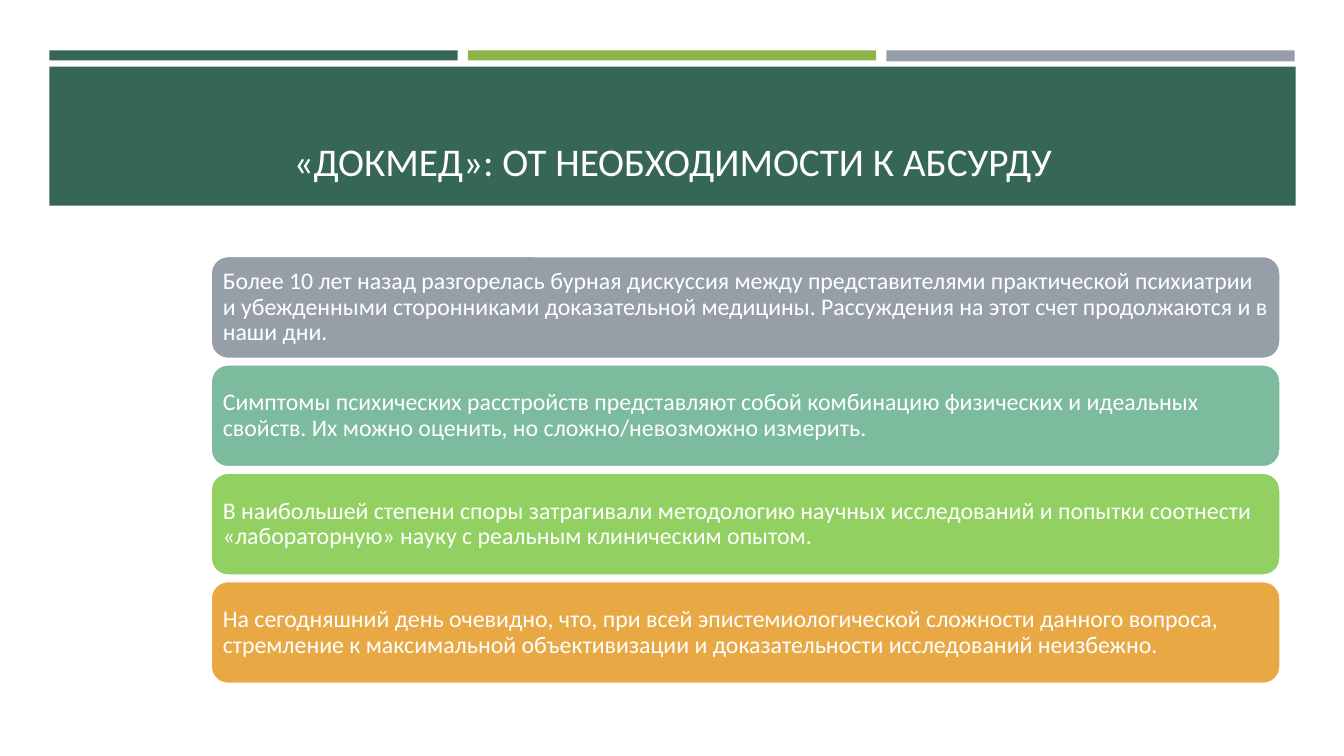
from pptx import Presentation
from pptx.dml.color import RGBColor
from pptx.enum.shapes import MSO_SHAPE
from pptx.enum.text import MSO_ANCHOR, PP_ALIGN
from pptx.util import Inches, Pt

RECT = MSO_SHAPE.RECTANGLE
ROUNDED = MSO_SHAPE.ROUNDED_RECTANGLE
MIDDLE, BOTTOM = MSO_ANCHOR.MIDDLE, MSO_ANCHOR.BOTTOM
LEFT, CENTER = PP_ALIGN.LEFT, PP_ALIGN.CENTER

WHITE = RGBColor(0xFF, 0xFF, 0xFF)
PINE = RGBColor(0x36, 0x66, 0x58)
OLIVE = RGBColor(0x8C, 0xB6, 0x4A)
GRAY = RGBColor(0x96, 0x9F, 0xA7)
MINT = RGBColor(0x7C, 0xBB, 0x9D)
LIME = RGBColor(0x92, 0xD1, 0x61)
AMBER = RGBColor(0xE8, 0xA8, 0x44)

prs = Presentation()
prs.slide_width, prs.slide_height = Inches(13.33), Inches(7.5)
slide = prs.slides.add_slide(prs.slide_layouts[6])


def add_block(kind, left, top, width, height, color):
    block = slide.shapes.add_shape(
        kind, Inches(left), Inches(top), Inches(width), Inches(height))
    block.shadow.inherit = False
    block.fill.solid()
    block.fill.fore_color.rgb = color
    block.line.fill.background()
    return block


def write(holder, text, size, frame_format, paragraph_format):
    frame = holder.text_frame
    for name, value in frame_format.items():
        setattr(frame, name, value)
    paragraph = frame.paragraphs[0]
    for name, value in paragraph_format.items():
        setattr(paragraph, name, value)
    run = paragraph.add_run()
    run.text = text
    for name, value in {"name": "Calibri", "size": Pt(size)}.items():
        setattr(run.font, name, value)
    run.font.color.rgb = WHITE


for column, (color, height) in enumerate([(PINE, 0.1), (OLIVE, 0.1), (GRAY, 0.11)]):
    add_block(RECT, 0.49 + column * 4.15, 0.5, 4.05, height, color)

add_block(RECT, 0.49, 0.66, 12.36, 1.38, PINE)

title = slide.shapes.add_textbox(Inches(0.64), Inches(0.8), Inches(12.06), Inches(1.08))
write(title, "«ДОКМЕД»: ОТ НЕОБХОДИМОСТИ К АБСУРДУ", 28,
      {"word_wrap": True, "vertical_anchor": BOTTOM}, {"alignment": CENTER})

theses = [
    (GRAY, "Более 10 лет назад разгорелась бурная дискуссия между представителями "
           "практической психиатрии и убежденными сторонниками доказательной медицины. "
           "Рассуждения на этот счет продолжаются и в наши дни."),
    (MINT, "Симптомы психических расстройств представляют собой комбинацию физических "
           "и идеальных свойств. Их можно оценить, но сложно/невозможно измерить."),
    (LIME, "В наибольшей степени споры затрагивали методологию научных исследований и "
           "попытки соотнести «лабораторную» науку с реальным клиническим опытом."),
    (AMBER, "На сегодняшний день очевидно, что, при всей эпистемиологической сложности "
            "данного вопроса, стремление к максимальной объективизации и "
            "доказательности исследований неизбежно."),
]
margins = dict.fromkeys(
    ["margin_left", "margin_right", "margin_top", "margin_bottom"], Inches(0.07))
thesis_frame = {"word_wrap": True, "vertical_anchor": MIDDLE, **margins}
thesis_paragraph = {"alignment": LEFT, "line_spacing": 0.9}

for row, (color, text) in enumerate(theses):
    thesis = add_block(ROUNDED, 2.09, 2.54 + row * 1.075, 10.61, 1.02, color)
    thesis.line.color.rgb = WHITE
    thesis.line.width = Pt(1.75)
    write(thesis, text, 17, thesis_frame, thesis_paragraph)

prs.save("out.pptx")
